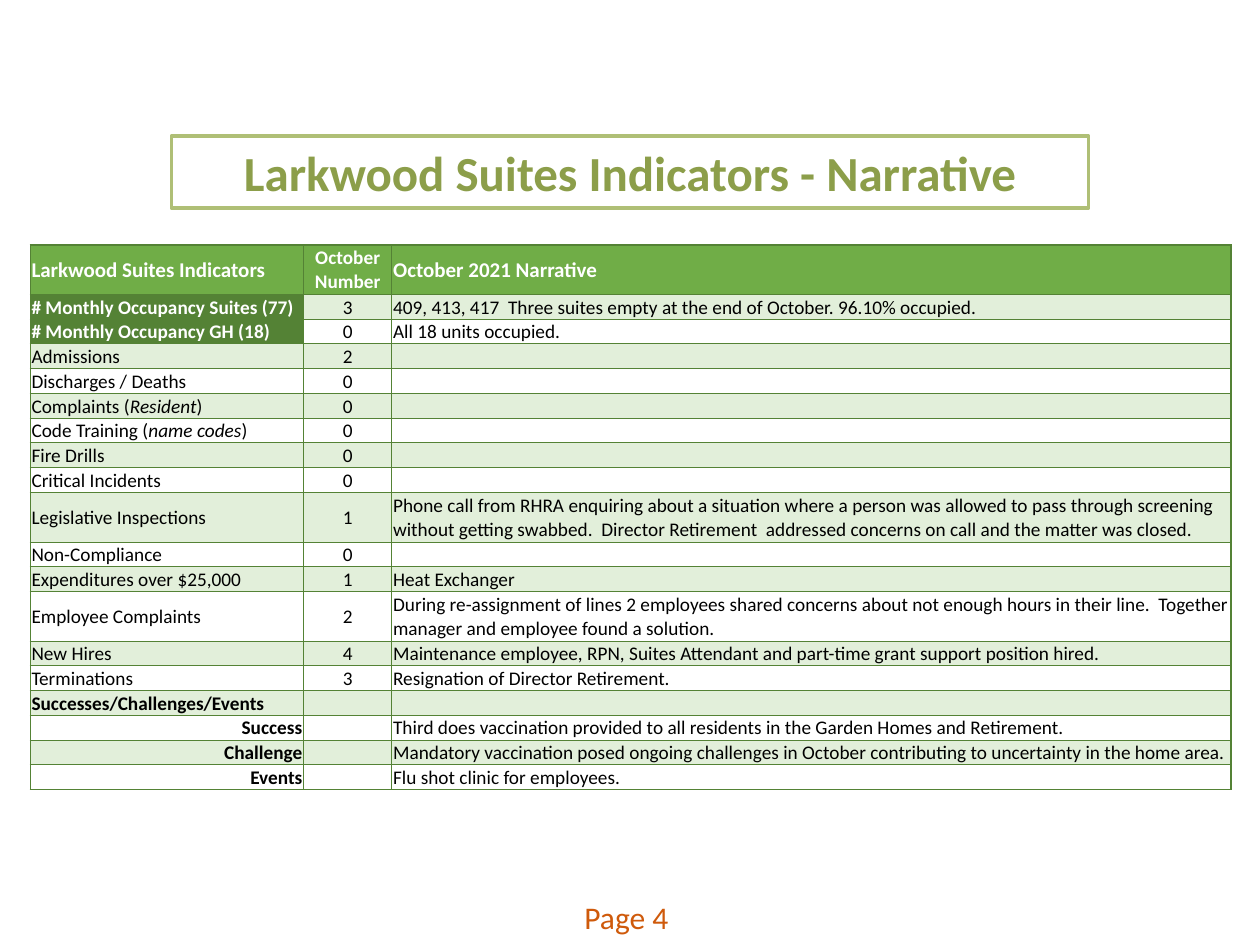
from lxml.etree import SubElement
from pptx import Presentation
from pptx.dml.color import RGBColor
from pptx.enum.text import MSO_ANCHOR, MSO_AUTO_SIZE, PP_ALIGN
from pptx.oxml import parse_xml
from pptx.oxml.ns import nsdecls, qn
from pptx.util import Inches, Pt

COLORS = {
    "white": "FFFFFF", "black": "000000", "olive": "8C9E4A", "frame": "AFBF76",
    "orange": "CF5A0B", "header": "70AD47", "dark": "548235", "band": "E2EFDA",
}
WIDTH, HEIGHT = Inches(10), Inches(7.5)
COLUMN_WEIGHTS = (2.17, 0.7, 6.66)
TABLE_SIZE = 11
SUMMARY_LABELS = ("Success", "Challenge", "Events")
HEADER = ("Larkwood Suites Indicators", "October\vNumber", "October 2021 Narrative")
INDICATORS = [
    ("# Monthly Occupancy Suites (77)", "3",
     "409, 413, 417  Three suites empty at the end of October. 96.10% occupied."),
    ("# Monthly Occupancy GH (18)", "0", "All 18 units occupied."),
    ("Admissions", "2", ""),
    ("Discharges / Deaths", "0", ""),
    ("Complaints (*Resident*)", "0", ""),
    ("Code Training (*name codes*)", "0", ""),
    ("Fire Drills", "0", ""),
    ("Critical Incidents", "0", ""),
    ("Legislative Inspections", "1",
     "Phone call from RHRA enquiring about a situation where a person was allowed to pass "
     "through screening without getting swabbed.  Director Retirement  addressed concerns "
     "on call and the matter was closed."),
    ("Non-Compliance", "0", ""),
    ("Expenditures over $25,000", "1", "Heat Exchanger"),
    ("Employee Complaints", "2",
     "During re-assignment of lines 2 employees shared concerns about not enough hours in "
     "their line.  Together manager and employee found a solution."),
    ("New Hires", "4",
     "Maintenance employee, RPN, Suites Attendant and part-time grant support position hired."),
    ("Terminations", "3", "Resignation of Director Retirement."),
    ("Successes/Challenges/Events", "", ""),
    ("Success", "",
     "Third does vaccination provided to all residents in the Garden Homes and Retirement."),
    ("Challenge", "",
     "Mandatory vaccination posed ongoing challenges in October contributing to uncertainty "
     "in the home area."),
    ("Events", "", "Flu shot clinic for employees."),
]


def color(name):
    return RGBColor.from_string(COLORS[name])


def share_box(left, top, width, height):
    return (round(WIDTH * left), round(HEIGHT * top),
            round(WIDTH * width), round(HEIGHT * height))


def set_attributes(target, values):
    for name, value in values.items():
        setattr(target, name, value)


def write_text(para, text, size, shade, bold=False):
    pieces = text.split("*")
    para.text = pieces[0]
    for index, piece in enumerate(pieces[1:], 1):
        span = para.add_run()
        set_attributes(span, {"text": piece})
        span.font.italic = index % 2 == 1
    for span in para.runs:
        set_attributes(span.font, {"name": "Calibri", "size": Pt(size), "bold": bold})
        span.font.color.rgb = color(shade)
    if not text:
        SubElement(para._p, qn("a:endParaRPr"), sz=str(size * 100))


def place_title(page, box):
    title = page.shapes.title
    set_attributes(title, dict(zip(("left", "top", "width", "height"), box)))
    title.fill.solid()
    title.fill.fore_color.rgb = color("white")
    title.line.color.rgb = color("frame")
    title.line.width = Pt(2)
    set_attributes(title.text_frame, {
        "word_wrap": True, "auto_size": MSO_AUTO_SIZE.NONE,
        "vertical_anchor": MSO_ANCHOR.MIDDLE})
    para = title.text_frame.paragraphs[0]
    write_text(para, "Larkwood Suites Indicators - Narrative", 28, "olive", True)
    para.alignment = PP_ALIGN.CENTER


def place_page_number(page, box):
    frame = page.shapes.add_textbox(*box).text_frame
    frame.word_wrap = True
    write_text(frame.paragraphs[0], "Page 4", 18, "orange")


def draw_borders(cell, widths):
    properties = cell._tc.get_or_add_tcPr()
    for index, (side, width) in enumerate(zip("LRTB", widths)):
        properties.insert(index, parse_xml(
            f'<a:ln{side} {nsdecls("a")} w="{Pt(width)}"><a:solidFill>'
            f'<a:srgbClr val="{COLORS["dark"]}"/></a:solidFill></a:ln{side}>'))


def cell_fill(row, column):
    if row == 0:
        return "header"
    if row <= 2 and column == 0:
        return "dark"
    return "band" if row % 2 else None


def format_cell(cell, text, row, column, label):
    fill = cell_fill(row, column)
    if fill:
        cell.fill.solid()
        cell.fill.fore_color.rgb = color(fill)
    else:
        cell.fill.background()
    set_attributes(cell, {
        "margin_left": Inches(0.01), "margin_top": Inches(0.01),
        "margin_right": Inches(0.01), "margin_bottom": 0,
        "vertical_anchor": MSO_ANCHOR.MIDDLE})
    reversed_text = fill in ("header", "dark")
    heading = column == 0 and label in SUMMARY_LABELS + ("Successes/Challenges/Events",)
    size = 12 if row == 0 and column != 1 else TABLE_SIZE
    para = cell.text_frame.paragraphs[0]
    write_text(para, text, size, "white" if reversed_text else "black",
               reversed_text or heading)
    if column == 1:
        para.alignment = PP_ALIGN.CENTER
    elif column == 0 and label in SUMMARY_LABELS:
        para.alignment = PP_ALIGN.RIGHT
    outer_edges = (column == 0, column == 2, row == 0, row == len(INDICATORS))
    draw_borders(cell, [1 if outer else 0.5 for outer in outer_edges])


def place_indicator_table(page, box):
    rows = [HEADER, *INDICATORS]
    table = page.shapes.add_table(len(rows), len(HEADER), *box).table
    set_attributes(table, {"first_row": False, "horz_banding": False})
    for column, weight in zip(table.columns, COLUMN_WEIGHTS):
        column.width = round(box[2] * weight / sum(COLUMN_WEIGHTS))
    line_counts = [2 if "\v" in number or len(narrative) > 120 else 1
                   for label, number, narrative in rows]
    for row, texts in enumerate(rows):
        table.rows[row].height = round(box[3] * line_counts[row] / sum(line_counts))
        for column, text in enumerate(texts):
            format_cell(table.cell(row, column), text, row, column, texts[0])


def main():
    deck = Presentation()
    set_attributes(deck, {"slide_width": WIDTH, "slide_height": HEIGHT})
    page = deck.slides.add_slide(deck.slide_layouts.get_by_name("Title Only"))
    place_page_number(page, share_box(0.454, 0.944, 0.233, 0.053))
    place_title(page, share_box(0.136, 0.144, 0.728, 0.076))
    place_indicator_table(page, share_box(0.024, 0.259, 0.953, 0.577))
    deck.save("out.pptx")


if __name__ == "__main__":
    main()
